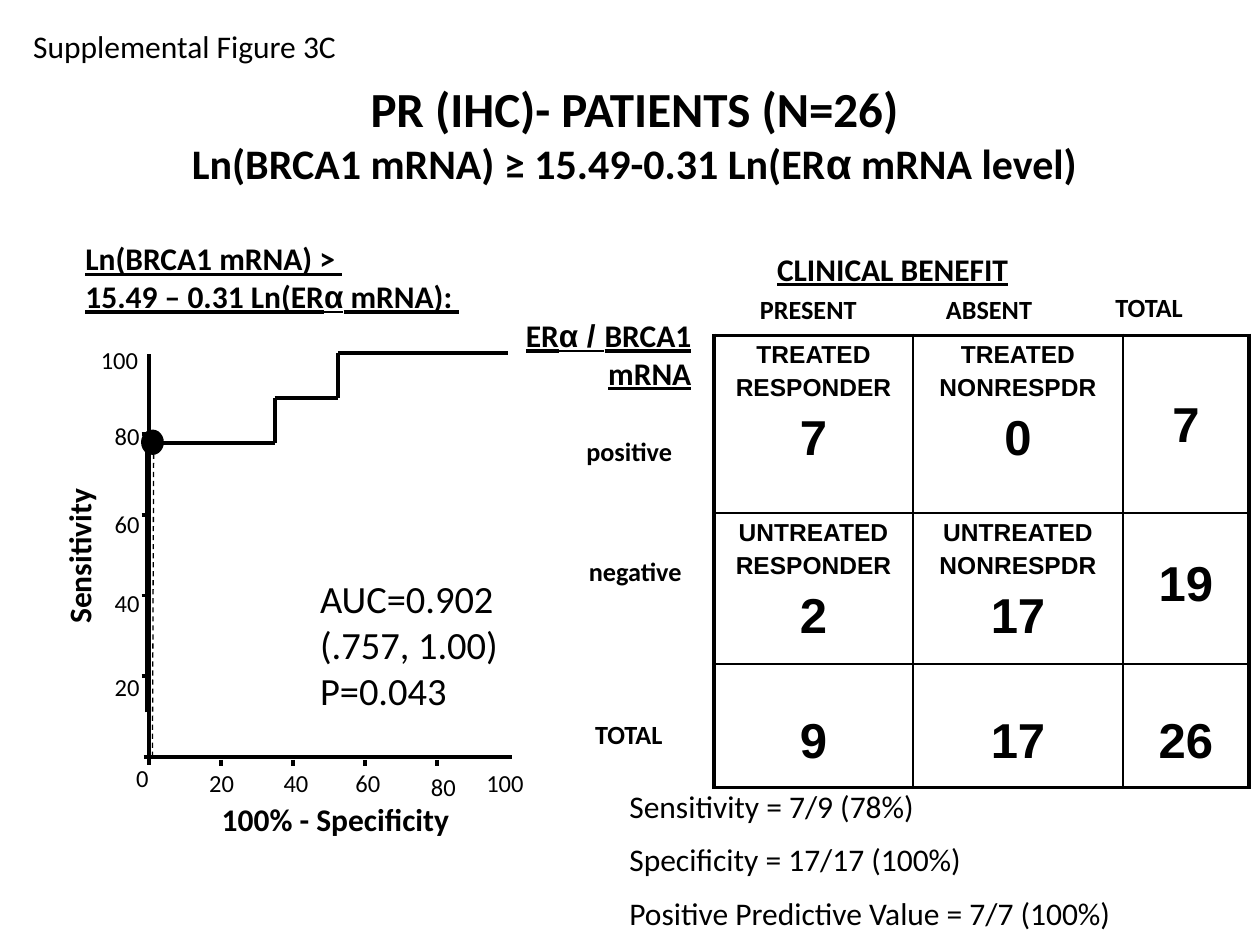
from lxml import etree
from pptx import Presentation
from pptx import util as u
from pptx.dml.color import RGBColor
from pptx.enum import dml, shapes, text
from pptx.oxml import ns

BLACK = RGBColor(0, 0, 0)
LEFT, CENTER, RIGHT = text.PP_ALIGN.LEFT, text.PP_ALIGN.CENTER, text.PP_ALIGN.RIGHT
CELL = u.Inches(0.1)
COLUMNS, ROWS = 100, 75


def write(frame, lines, sizes=(18,), font="Calibri", bold=False, underline=False,
          align=LEFT, spacing=0, symbol="α"):
    for index, line in enumerate(lines):
        paragraph = frame.paragraphs[0] if index == 0 else frame.add_paragraph()
        size = sizes[min(index, len(sizes) - 1)]
        paragraph.alignment = align
        paragraph.space_before = u.Pt(size * spacing)
        for part in filter(None, line.partition(symbol)):
            run = paragraph.add_run()
            run.text = part
            run.font.name = "Arial" if part == symbol else font
            run.font.size = u.Pt(size)
            run.font.bold = bold
            run.font.underline = underline
            run.font.color.rgb = BLACK


def draw_line(start_x, start_y, end_x, end_y, width=2.25):
    ends = [int(value * CELL) for value in (start_x, start_y, end_x, end_y)]
    line = slide.shapes.add_connector(shapes.MSO_CONNECTOR.STRAIGHT, *ends)
    line.line.color.rgb = BLACK
    line.line.width = u.Pt(width)
    etree.SubElement(line._element.spPr, ns.qn("a:effectLst"))
    return line


presentation = Presentation()
presentation.slide_width = COLUMNS * CELL
presentation.slide_height = ROWS * CELL
slide = presentation.slides.add_slide(presentation.slide_layouts[1])
title, body = slide.placeholders

for shape, box in ((title, (5.55, 5.75, 89.6, 9.6)), (body, (48.95, 61.95, 48.5, 13))):
    shape.left, shape.top, shape.width, shape.height = [int(value * CELL) for value in box]
    shape.text_frame.auto_size = text.MSO_AUTO_SIZE.NONE
    shape.text_frame.vertical_anchor = text.MSO_ANCHOR.TOP
write(title.text_frame,
      ["PR (IHC)- PATIENTS (N=26)", "Ln(BRCA1 mRNA) ≥ 15.49-0.31 Ln(ERα mRNA level)"],
      sizes=(28, 24), bold=True, align=CENTER)
write(body.text_frame,
      ["Sensitivity = 7/9 (78%)", "Specificity = 17/17 (100%)",
       "Positive Predictive Value = 7/7 (100%)"], spacing=0.5)
for paragraph in body.text_frame.paragraphs:
    properties = paragraph._p.get_or_add_pPr()
    properties.set("marL", "0")
    properties.set("indent", "0")
    etree.SubElement(properties, ns.qn("a:buNone"))

heading = dict(bold=True, underline=True)
label = dict(sizes=(15,), bold=True)
centered = dict(label, align=CENTER)
for lines, box, style in (
    (["Supplemental Figure 3C"], (1.65, 1.65, 77.5, 4), {}),
    (["Ln(BRCA1 mRNA) > ", "15.49 – 0.31 Ln(ERα mRNA): "], (5.8, 18.5, 39, 6.9), heading),
    (["ERα / BRCA1 mRNA"], (34.75, 24.6, 21.1, 7), dict(heading, align=RIGHT, symbol="α / ")),
    (["CLINICAL BENEFIT"], (56.15, 19.35, 29.4, 3.9), dict(heading, align=CENTER)),
    (["PRESENT"], (54.65, 22.8, 19, 3.4), centered),
    (["ABSENT"], (71.3, 22.8, 14.4, 3.4), centered),
    (["TOTAL"], (86.3, 22.65, 9.8, 3.4), centered),
    (["positive"], (45.55, 34.05, 12, 3.4), label),
    (["negative"], (45.75, 43.55, 12, 3.4), label),
    (["TOTAL"], (45, 56.55, 9.8, 3.4), centered),
):
    shape = slide.shapes.add_textbox(*[int(value * CELL) for value in box])
    shape.text_frame.word_wrap = True
    write(shape.text_frame, lines, **style)

origin_x, origin_y, span_x, span_y = 11.7, 60.1, 28.6, 32.1
responder_step, nonresponder_step = span_y / 9, span_x / 17
curve_x, curve_y = origin_x, origin_y - responder_step
for rises, runs in ((6, 6), (1, 3), (1, 8)):
    moves = [(0, -responder_step)] * rises + [(nonresponder_step, 0)] * runs
    for move_x, move_y in moves:
        draw_line(curve_x, curve_y, curve_x + move_x, curve_y + move_y)
        curve_x, curve_y = curve_x + move_x, curve_y + move_y

draw_line(11.8, 60.7, 11.8, 28.1)
draw_line(11.4, origin_y, 40.6, origin_y)
for share in (0.2, 0.4, 0.6, 0.8):
    tick_x, tick_y = origin_x + span_x * share, origin_y - span_y * share
    draw_line(tick_x + 0.1, 60.3, tick_x + 0.1, 60.8)
    draw_line(11.25, tick_y, 11.7, tick_y)
cutoff = draw_line(12.2, 35.3, 12.1, origin_y, width=0.75)
cutoff.line.dash_style = dml.MSO_LINE.DASH
point = slide.shapes.add_shape(
    shapes.MSO_SHAPE.OVAL, *[int(value * CELL) for value in (11.35, 34.25, 1.5, 1.7)])
point.shadow.inherit = False
point.fill.solid()
point.fill.fore_color.rgb = BLACK
point.line.color.rgb = BLACK
point.line.width = u.Pt(2.25)

scale_labels = [
    ("0", 10.8, 60.55), ("20", 16.6, 60.95), ("40", 22.5, 60.95), ("60", 28.2, 60.95),
    ("80", 34.2, 61.3), ("100", 38.6, 60.95),
    ("20", 9.1, 53.3), ("40", 9.1, 46.7), ("60", 9.1, 40.4), ("80", 9.1, 33.4), ("100", 8, 27.4),
]
chart_texts = [([value], (left, top, 1.1 * len(value), 2.3), 0, dict(sizes=(14,)))
               for value, left, top in scale_labels]
chart_texts += [
    (["AUC=0.902", "(.757, 1.00)", "P=0.043"], (25.4, 45.65, 17.9, 11), 0, dict(sizes=(22,))),
    (["100% - Specificity"], (17.6, 63.5, 21.1, 3), 0, dict(bold=True)),
    (["Sensitivity"], (0, 41.75, 12.5, 3), 270, dict(bold=True)),
]
for lines, box, rotation, style in chart_texts:
    shape = slide.shapes.add_textbox(*[int(value * CELL) for value in box])
    frame = shape.text_frame
    frame.margin_left = frame.margin_right = frame.margin_top = frame.margin_bottom = 0
    frame.word_wrap = False
    shape.rotation = rotation
    write(frame, lines, **style)

counts = [
    [["TREATED", "RESPONDER", "7"], ["TREATED", "NONRESPDR", "0"], ["7"]],
    [["UNTREATED", "RESPONDER", "2"], ["UNTREATED", "NONRESPDR", "17"], ["19"]],
    [["9"], ["17"], ["26"]],
]
total_margins = (5, 3.5, 4)
column_widths, row_heights = (15.8, 16.65, 10), (14.1, 12, 9.8)
table = slide.shapes.add_table(
    3, 3, *[int(value * CELL) for value in (56.67, 26.62, sum(column_widths), sum(row_heights))]).table
table.first_row = table.horz_banding = False
for column, width in zip(table.columns, column_widths):
    column.width = int(width * CELL)
for row, height in zip(table.rows, row_heights):
    row.height = int(height * CELL)
for row, values in enumerate(counts):
    for column, lines in enumerate(values):
        cell = table.cell(row, column)
        single = len(lines) == 1
        cell.margin_top = int((total_margins[row] if single else 0.5) * CELL)
        write(cell.text_frame, lines, sizes=(28,) if single else (14, 14, 28),
              font="Arial", bold=True, align=CENTER, spacing=0.2)
        properties = cell._tc.get_or_add_tcPr()
        outer_edges = {"lnL": column == 0, "lnR": column == 2, "lnT": row == 0, "lnB": row == 2}
        for side, outer in outer_edges.items():
            border = etree.SubElement(properties, ns.qn("a:" + side),
                                      w=str(u.Pt(2.25 if outer else 1)))
            fill = etree.SubElement(border, ns.qn("a:solidFill"))
            etree.SubElement(fill, ns.qn("a:srgbClr"), val=str(BLACK))
        cell.fill.background()

presentation.save("out.pptx")
